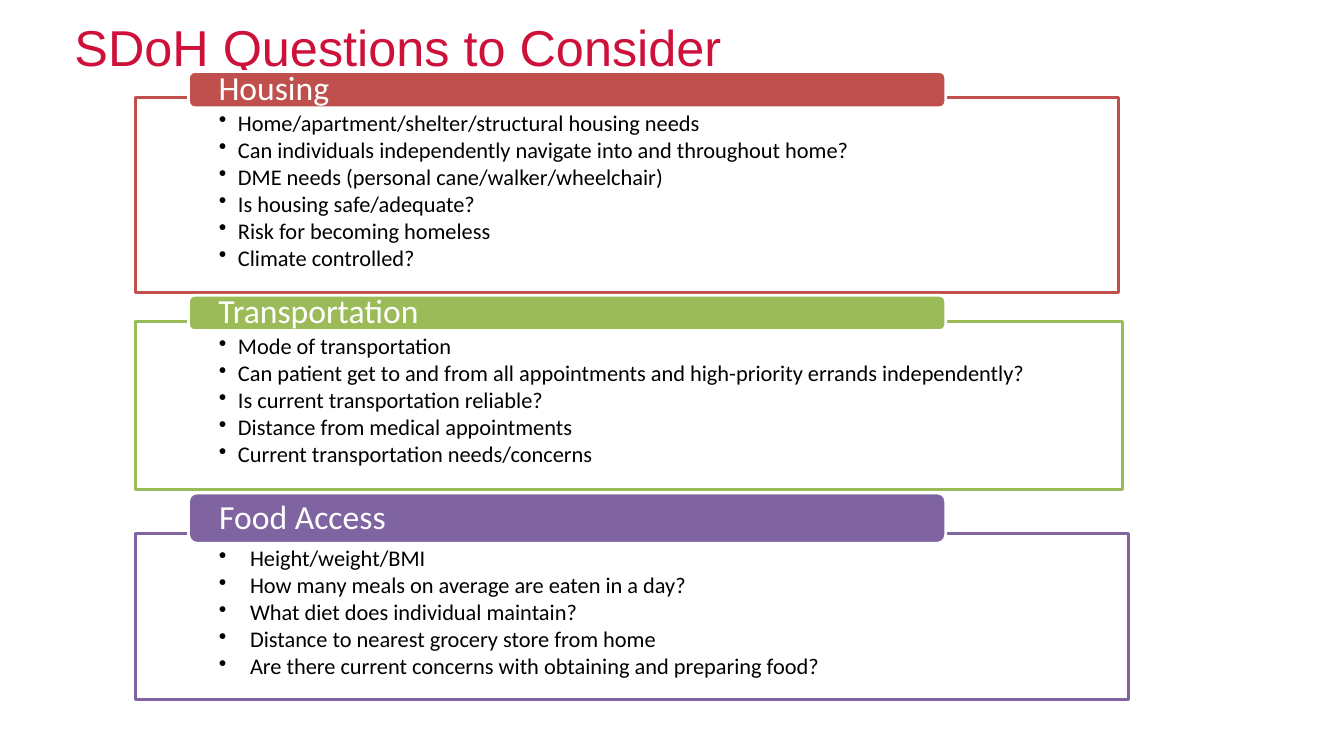
import pptx
import pptx.dml.color
import pptx.enum.shapes
import pptx.enum.text
import pptx.oxml.ns
import pptx.util
from lxml import etree

Inches = pptx.util.Inches
Pt = pptx.util.Pt
Shape = pptx.enum.shapes.MSO_SHAPE
Anchor = pptx.enum.text.MSO_ANCHOR
Align = pptx.enum.text.PP_ALIGN
qn = pptx.oxml.ns.qn

COLORS = {
    "title": "CD113B",
    "housing": "C0504D",
    "transportation": "9BBB59",
    "food": "8064A2",
    "white": "FFFFFF",
    "black": "000000",
}

# Each section: color, heading, heading top and height, box top, width and height, indent, questions
SECTIONS = [
    ("housing", "Housing", 0.71, 0.36, 0.97, 9.75, 1.93, 0.19, [
        "Home/apartment/shelter/structural housing needs",
        "Can individuals independently navigate into and throughout home?",
        "DME needs (personal cane/walker/wheelchair)",
        "Is housing safe/adequate?",
        "Risk for becoming homeless",
        "Climate controlled?",
    ]),
    ("transportation", "Transportation", 2.93, 0.35, 3.19, 9.79, 1.67, 0.19, [
        "Mode of transportation",
        "Can patient get to and from all appointments and high-priority errands independently?",
        "Is current transportation reliable?",
        "Distance from medical appointments",
        "Current transportation needs/concerns",
    ]),
    ("food", "Food Access", 4.89, 0.5, 5.29, 9.85, 1.65, 0.31, [
        "Height/weight/BMI",
        "How many meals on average are eaten in a day?",
        "What diet does individual maintain?",
        "Distance to nearest grocery store from home",
        "Are there current concerns with obtaining and preparing food?",
    ]),
]


class SlideBuilder:
    def __init__(self, slide):
        self.slide = slide
        self.line_width = Pt(2)

    def color(self, name):
        return pptx.dml.color.RGBColor.from_string(COLORS[name])

    def set_values(self, target, values):
        for name, value in values.items():
            setattr(target, name, value)

    def set_frame(self, frame, anchor, left, top, right, bottom):
        self.set_values(frame, {
            "word_wrap": True, "vertical_anchor": anchor,
            "margin_left": Inches(left), "margin_top": Inches(top),
            "margin_right": Inches(right), "margin_bottom": Inches(bottom),
        })

    def set_text(self, paragraph, text, font, size, color, **layout):
        paragraph.text = text
        self.set_values(paragraph, {"alignment": Align.LEFT, **layout})
        run_font = paragraph.runs[0].font
        self.set_values(run_font, {"name": font, "size": Pt(size)})
        run_font.color.rgb = self.color(color)

    def panel(self, kind, bounds, fill, line):
        shape = self.slide.shapes.add_shape(kind, *map(Inches, bounds))
        shape.shadow.inherit = False
        shape.fill.solid()
        shape.fill.fore_color.rgb = self.color(fill)
        shape.line.color.rgb = self.color(line)
        shape.line.width = self.line_width
        return shape

    def title(self, text, bounds):
        box = self.slide.shapes.add_textbox(*map(Inches, bounds))
        self.set_frame(box.text_frame, Anchor.MIDDLE, 0.1, 0.05, 0.1, 0.05)
        self.set_text(box.text_frame.paragraphs[0], text, "Arial", 36, "title")

    def question_box(self, bounds, color, questions, indent):
        shape = self.panel(Shape.RECTANGLE, bounds, "white", color)
        fill_color = shape.element.spPr.find(qn("a:solidFill"))[0]
        etree.SubElement(fill_color, qn("a:alpha"), val="90000")
        frame = shape.text_frame
        self.set_frame(frame, Anchor.TOP, 0.83, 0.14, 0.83, 0.12)
        for index, question in enumerate(questions):
            paragraph = frame.add_paragraph() if index else frame.paragraphs[0]
            properties = paragraph._p.get_or_add_pPr()
            properties.set("marL", str(Inches(indent)))
            properties.set("indent", str(-Inches(indent)))
            etree.SubElement(properties, qn("a:buChar"), char="•")
            self.set_text(paragraph, question, "Calibri", 16, "black",
                          level=1, line_spacing=0.9, space_after=Pt(2))

    def heading(self, bounds, color, text):
        shape = self.panel(Shape.ROUNDED_RECTANGLE, bounds, color, "white")
        self.set_frame(shape.text_frame, Anchor.MIDDLE, 0.28, 0, 0.28, 0)
        self.set_text(shape.text_frame.paragraphs[0], text, "Calibri", 24, "white",
                      line_spacing=0.9)


def main():
    presentation = pptx.Presentation()
    presentation.slide_width = Inches(13.33)
    presentation.slide_height = Inches(7.5)
    slide = presentation.slides.add_slide(presentation.slide_layouts[6])
    builder = SlideBuilder(slide)

    # Title
    builder.title("SDoH Questions to Consider", (0.64, 0.07, 12, 0.78))

    # Question boxes with overlapping headings
    for (color, heading, heading_top, heading_height,
         top, width, height, indent, questions) in SECTIONS:
        builder.question_box((1.34, top, width, height), color, questions, indent)
        builder.heading((1.87, heading_top, 7.51, heading_height), color, heading)

    presentation.save("out.pptx")


if __name__ == "__main__":
    main()
